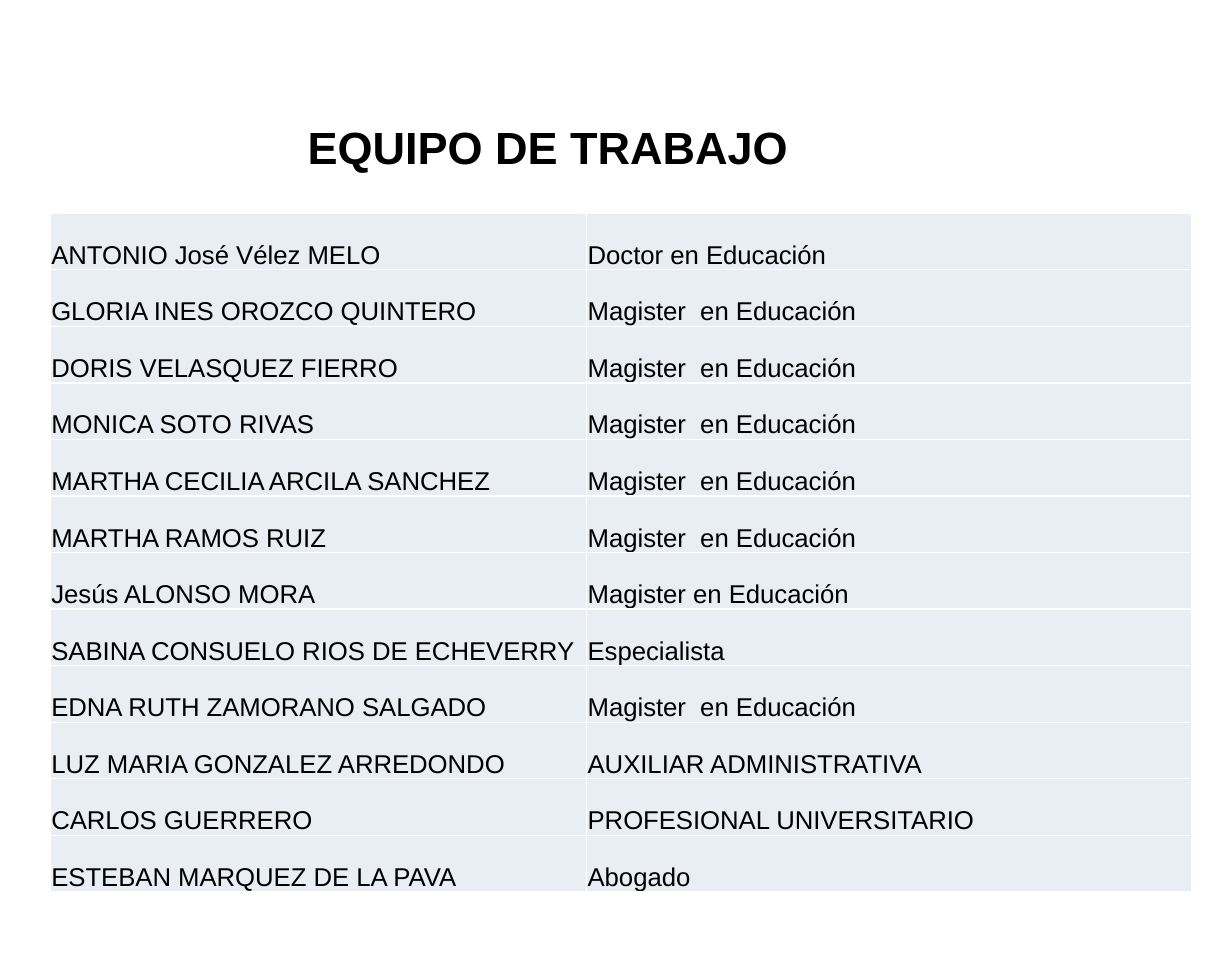
from lxml import etree
from pptx import Presentation
from pptx.dml.color import RGBColor
from pptx.enum.text import MSO_ANCHOR, PP_ALIGN
from pptx.oxml.ns import qn
from pptx.util import Pt

BOTTOM, MIDDLE = MSO_ANCHOR.BOTTOM, MSO_ANCHOR.MIDDLE
CENTER, LEFT = PP_ALIGN.CENTER, PP_ALIGN.LEFT
TITLE_ONLY = 5

FONT = "Arial"
COLORS = {"text": "000000", "cell": "E9EDF4", "border": "FFFFFF"}

TEAM = [
    ("ANTONIO José Vélez MELO", "Doctor en Educación"),
    ("GLORIA INES OROZCO QUINTERO", "Magister  en Educación"),
    ("DORIS VELASQUEZ FIERRO", "Magister  en Educación"),
    ("MONICA SOTO RIVAS", "Magister  en Educación"),
    ("MARTHA CECILIA ARCILA SANCHEZ", "Magister  en Educación"),
    ("MARTHA RAMOS RUIZ", "Magister  en Educación"),
    ("Jesús ALONSO MORA", "Magister en Educación"),
    ("SABINA CONSUELO RIOS DE ECHEVERRY", "Especialista"),
    ("EDNA RUTH ZAMORANO SALGADO", "Magister  en Educación"),
    ("LUZ MARIA GONZALEZ ARREDONDO", "AUXILIAR ADMINISTRATIVA"),
    ("CARLOS GUERRERO", "PROFESIONAL UNIVERSITARIO"),
    ("ESTEBAN MARQUEZ DE LA PAVA", "Abogado"),
]
COLUMN_WIDTHS = (333.2, 375.6)
ROW_HEIGHT = 35.16


def format_text(tf, size, align, bold=False):
    for p in tf.paragraphs:
        p.alignment = align
        for r in p.runs:
            r.font.name = FONT
            r.font.size = Pt(size)
            r.font.bold = bold
            r.font.color.rgb = RGBColor.from_string(COLORS["text"])


def set_title(slide, text):
    sp = slide.shapes.title
    sp.left, sp.top, sp.width, sp.height = Pt(99.4), Pt(70.6), Pt(481.7), Pt(41)
    tf = sp.text_frame
    tf.text = text
    tf.word_wrap = True
    tf.vertical_anchor = MIDDLE
    format_text(tf, 28, CENTER, bold=True)


def set_borders(cell):
    # Border lines come before the fill in the cell properties
    tc_pr = cell._tc.get_or_add_tcPr()
    for i, side in enumerate(("a:lnL", "a:lnR", "a:lnT", "a:lnB")):
        ln = etree.Element(qn(side), w=str(Pt(1)))
        fill = etree.SubElement(ln, qn("a:solidFill"))
        etree.SubElement(fill, qn("a:srgbClr"), val=COLORS["border"])
        tc_pr.insert(i, ln)


def fill_cell(cell, text):
    cell.text = text
    cell.vertical_anchor = BOTTOM
    cell.margin_left = cell.margin_right = cell.margin_top = Pt(0.6)
    cell.margin_bottom = Pt(0)
    cell.fill.solid()
    cell.fill.fore_color.rgb = RGBColor.from_string(COLORS["cell"])
    set_borders(cell)
    format_text(cell.text_frame, 16, LEFT)


def add_team_table(slide, left, top):
    table = slide.shapes.add_table(
        len(TEAM), len(COLUMN_WIDTHS), Pt(left), Pt(top),
        Pt(sum(COLUMN_WIDTHS)), Pt(ROW_HEIGHT * len(TEAM))).table
    table.first_row = table.horz_banding = False
    for column, width in zip(table.columns, COLUMN_WIDTHS):
        column.width = Pt(width)
    for row, member in zip(table.rows, TEAM):
        row.height = Pt(ROW_HEIGHT)
        for cell, text in zip(row.cells, member):
            fill_cell(cell, text)


def main():
    prs = Presentation()
    prs.slide_width, prs.slide_height = Pt(765.4), Pt(595.4)
    slide = prs.slides.add_slide(prs.slide_layouts[TITLE_ONLY])

    # Heading
    set_title(slide, "EQUIPO DE TRABAJO")

    # Team members and their qualifications
    add_team_table(slide, 31.3, 132.5)

    prs.save("out.pptx")


if __name__ == "__main__":
    main()
